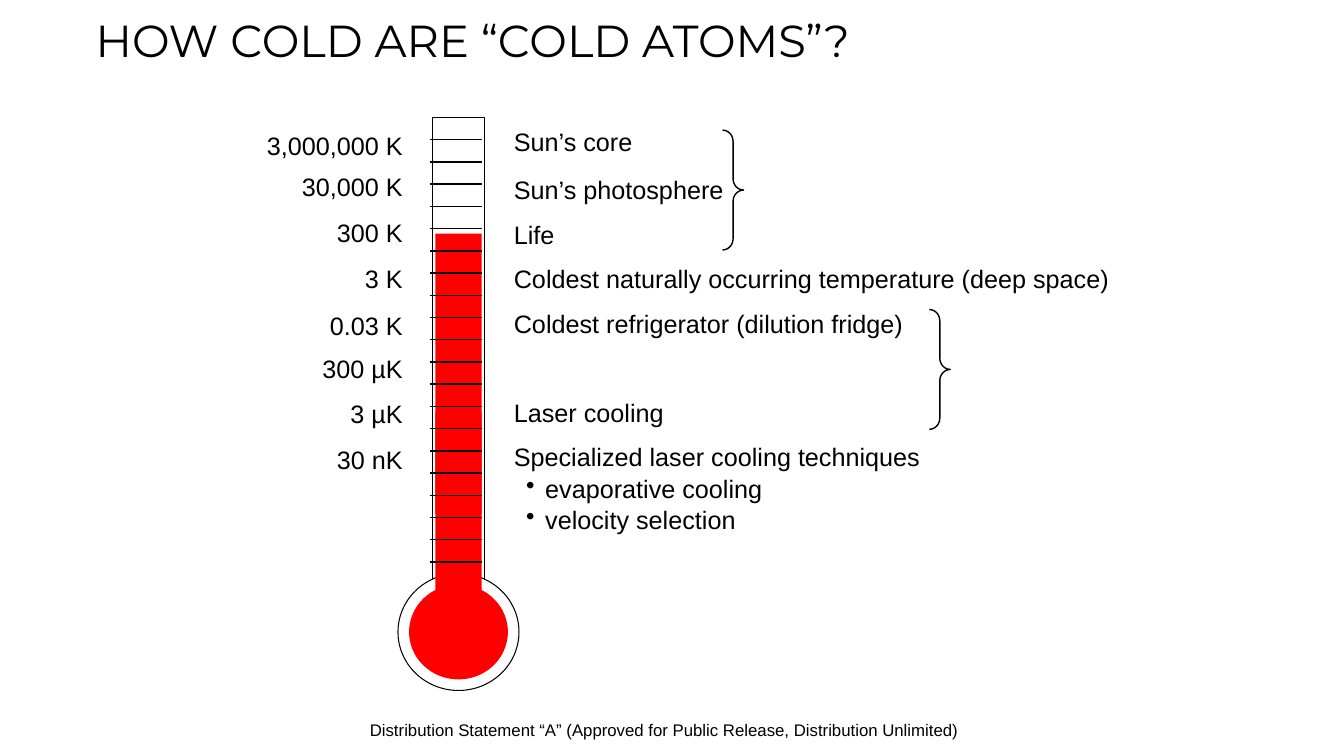
from collections import namedtuple
from dataclasses import dataclass

import pptx
import pptx.dml.color
import pptx.enum.shapes
import pptx.enum.text
import pptx.oxml
import pptx.oxml.ns
import pptx.util
from lxml import etree

Cm = pptx.util.Cm
Pt = pptx.util.Pt
RGB = pptx.dml.color.RGBColor
SHAPE = pptx.enum.shapes.MSO_SHAPE
ALIGN = pptx.enum.text.PP_ALIGN
NS = pptx.oxml.ns.qn
Box = namedtuple("Box", "left top width height")  # centimetres


@dataclass(frozen=True)
class Theme:
    ink = RGB(0, 0, 0)
    paper = RGB(255, 255, 255)
    red = RGB(255, 0, 0)
    head = {"name": "Montserrat", "size": Pt(32)}
    body = {"name": "Arial", "size": Pt(18)}
    foot = {"name": "Arial", "size": Pt(12)}
    thin = Pt(0.75)
    thick = Pt(1)


THEME = Theme()

SCALE = [  # text, offset from the top of the column
    ("3,000,000 K", 0), ("30,000 K", 1.04), ("300 K", 2.21), ("3 K", 3.35),
    ("0.03 K", 4.55), ("300 µK", 5.64), ("3 µK", 6.76), ("30 nK", 7.92),
]
NOTES = [
    (["Sun’s core"], 0), (["Sun’s photosphere"], 1.22), (["Life"], 2.36),
    (["Coldest naturally occurring temperature (deep space)"], 3.46),
    (["Coldest refrigerator (dilution fridge)"], 4.6),
    (["Laser cooling"], 6.83),
    (["Specialized laser cooling techniques",
      "evaporative cooling", "velocity selection"], 7.95),
]


def measure(box):
    return [Cm(round(size, 2)) for size in box]


def add_text(slide, box, lines, style, align=ALIGN.LEFT, inset=None):
    """Write the first line plain and any further lines as bullets."""
    frame = slide.shapes.add_textbox(*measure(box)).text_frame
    frame.word_wrap = True
    if inset is not None:
        for side in ("left", "top", "right", "bottom"):
            setattr(frame, f"margin_{side}", inset)
    for index, line in enumerate(lines):
        para = frame.add_paragraph() if index else frame.paragraphs[0]
        para.alignment = align
        if index:
            add_bullet(para)
        para.text = line
        for key, value in style.items():
            setattr(para.font, key, value)
        para.font.color.rgb = THEME.ink


def add_bullet(para):
    props = para._p.get_or_add_pPr()
    props.set("marL", str(Cm(0.79)))
    props.set("indent", str(Cm(-0.48)))
    etree.SubElement(props, NS("a:buChar")).set("char", "•")
    para.space_before = Pt(1)


def add_part(slide, kind, box, fill=None, width=None):
    part = slide.shapes.add_shape(kind, *measure(box))
    part.shadow.inherit = False
    if fill is None:
        part.fill.background()
    else:
        part.fill.solid()
        part.fill.fore_color.rgb = fill
    if width is None:
        part.line.fill.background()
    else:
        part.line.color.rgb = THEME.ink
        part.line.width = width
    return part


def add_tick(slide, left, right, top):
    x, y, end = measure((left, top, right))
    tick = slide.shapes.add_connector(
        pptx.enum.shapes.MSO_CONNECTOR.STRAIGHT, x, y, end, y)
    tick.line.color.rgb = THEME.ink
    tick.line.width = THEME.thick
    etree.SubElement(tick._element.spPr, NS("a:effectLst"))


def draw_gauge(slide, box):
    """Draw the thermometer: tube, bulb, red filling and ticks."""
    left, top, width, height = box
    mid = left + width / 2

    def center(wide, down, tall):
        return Box(mid - wide / 2, top + down, wide, tall)

    add_part(slide, SHAPE.RECTANGLE, center(1.32, 0, 12.17), None, THEME.thin)
    add_part(slide, SHAPE.OVAL, center(width, height - 2.95, 2.95),
             THEME.paper, THEME.thin)
    add_part(slide, SHAPE.OVAL, center(2.49, height - 2.67, 2.39), THEME.red)
    for down, tall in ((2.92, 7.06), (7.42, 6.12)):
        add_part(slide, SHAPE.RECTANGLE, center(1.17, down, tall), THEME.red)
    for index in range(20):
        add_tick(slide, mid - 0.72, mid + 0.6, top + 0.55 + index * 0.56)


def draw_scale(slide, box):
    for text, down in SCALE:
        add_text(slide, Box(box.left, box.top + down, box.width, 1.02),
                 [text], THEME.body, ALIGN.RIGHT)


def draw_notes(slide, box):
    for lines, down in NOTES:
        height = 1.02 + 0.77 * (len(lines) - 1)
        add_text(slide, Box(box.left, box.top + down, box.width, height),
                 lines, THEME.body)
    for across, down in ((5.51, 0.23), (10.72, 4.75)):
        brace = add_part(
            slide, SHAPE.RIGHT_BRACE,
            Box(box.left + across, box.top + down, 0.53, 3.02),
            None, THEME.thick)
        brace.adjustments[0] = 0.53
        brace.adjustments[1] = 0.5


def main():
    deck = pptx.Presentation()
    deck.slide_width, deck.slide_height = Cm(33.87), Cm(19.05)
    slide = deck.slides.add_slide(deck.slide_layouts[6])
    add_text(slide, Box(9.07, 18.01, 15.75, 0.76),
             ["Distribution Statement “A” (Approved for Public Release, "
              "Distribution Unlimited)"], THEME.foot)
    add_text(slide, Box(2.41, 0.33, 29.62, 1.3),
             ["HOW COLD ARE “COLD ATOMS”?"], THEME.head, inset=0)
    draw_gauge(slide, Box(10.03, 2.97, 3.05, 14.43))
    draw_scale(slide, Box(6.35, 3.15, 4.05, 8.94))
    draw_notes(slide, Box(12.7, 3.05, 15.55, 10.52))
    deck.save("out.pptx")


if __name__ == "__main__":
    main()
